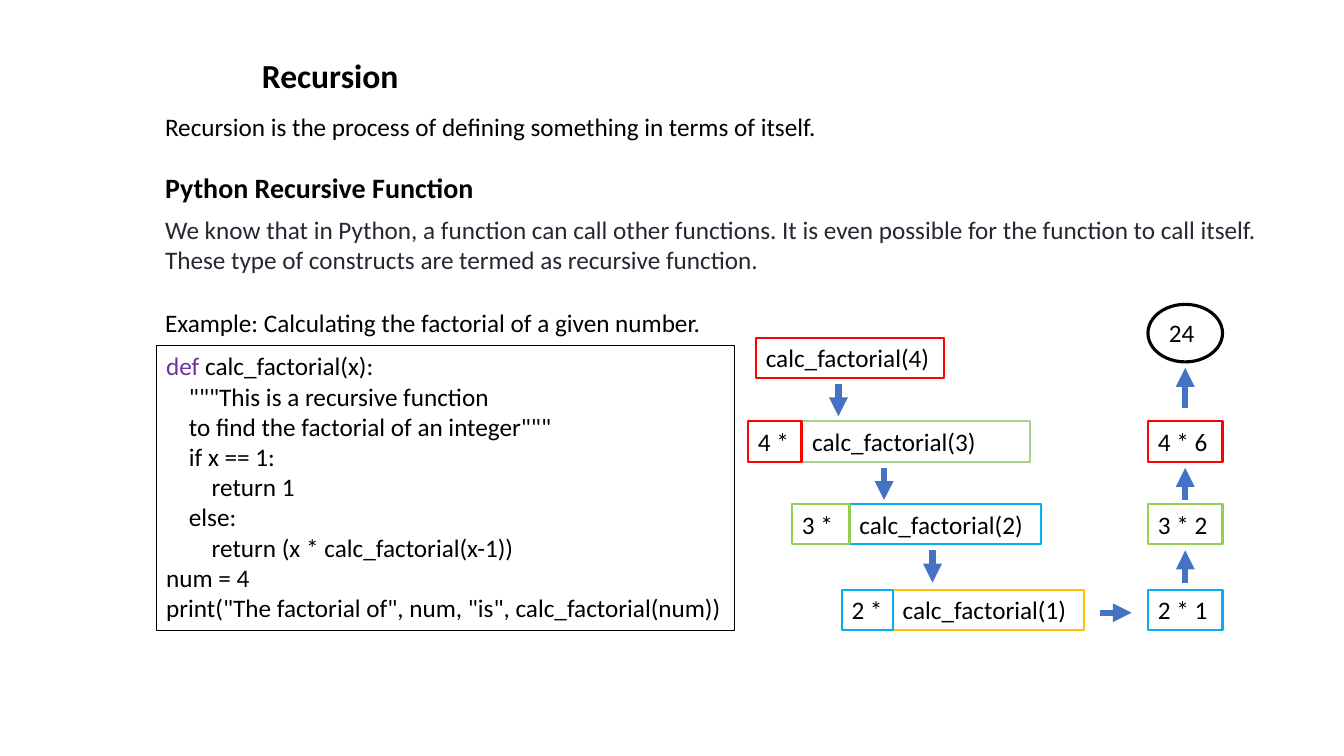
from lxml.etree import SubElement
from pptx import Presentation
from pptx.dml.color import RGBColor
from pptx.enum.shapes import MSO_CONNECTOR, MSO_SHAPE
from pptx.enum.text import MSO_ANCHOR, PP_ALIGN
from pptx.oxml.ns import qn
from pptx.util import Cm, Pt

COLORS = {
    "black": "000000", "slate": "252830", "purple": "7030A0",
    "red": "FF0000", "sage": "A9D18E", "green": "92D050",
    "sky": "00B0F0", "gold": "FFC000", "arrow": "4472C4",
}

# left, top, width, height, size, bold, color, lines
TEXTS = [
    (6.35, 1.27, 3.99, 1.27, 24, True, "black", ["Recursion"]),
    (3.91, 2.69, 17.12, 1.02, 18, False, "black",
     ["Recursion is the process of defining something in terms of itself."]),
    (3.91, 4.17, 8.36, 1.12, 20, True, "black", ["Python Recursive Function"]),
    (3.91, 5.28, 28.35, 1.8, 18, False, "slate",
     ["We know that in Python, a function can call other functions. "
      "It is even possible for the function to call itself.",
      "These type of constructs are termed as recursive function."]),
    (3.91, 7.62, 14.48, 1.02, 18, False, "black",
     ["Example: Calculating the factorial of a given number."]),
]

CODE_BOX = (3.94, 8.71, 14.58, 7.19)
CODE = [
    [("def ", "purple"), ("calc_factorial(x):", "black")],
    '    """This is a recursive function',
    '    to find the factorial of an integer"""',
    "    if x == 1:",
    "        return 1",
    "    else:",
    "        return (x * calc_factorial(x-1))",
    "num = 4",
    'print("The factorial of", num, "is", calc_factorial(num))',
]

ROW_TOPS = [8.51, 10.62, 12.7, 14.86]
BOX_HEIGHT = 1.02
# row, left, width, color, label
CALLS = [
    (0, 19.05, 4.75, "red", "calc_factorial(4)"),
    (1, 20.22, 5.74, "sage", "calc_factorial(3)"),
    (2, 21.41, 4.83, "sky", "calc_factorial(2)"),
    (3, 22.5, 4.83, "gold", "calc_factorial(1)"),
]
FACTORS = [
    (1, 18.85, 1.35, "red", "4 *"),
    (2, 19.96, 1.45, "green", "3 *"),
    (3, 21.21, 1.3, "sky", "2 *"),
]
RESULT_LEFT, RESULT_WIDTH = 28.93, 1.88
RESULTS = [
    (row, RESULT_LEFT, RESULT_WIDTH, color, label)
    for row, color, label in [(3, "sky", "2 * 1"), (2, "green", "3 * 2"), (1, "red", "4 * 6")]
]
ANSWER_TOP, ANSWER_HEIGHT, ANSWER = 7.67, 1.45, "24"

ARROW_LENGTH, ARROW_GAP = 0.81, 0.15
DOWN_ARROW_LEFTS = [21.13, 22.28, 23.5]
RETURN_ARROW = (27.71, 15.44)
ANSWER_ARROW = (10.29, 9.27)


def rgb(name):
    return RGBColor.from_string(COLORS[name])


def write(shape, lines, color="black", size=18, bold=False):
    """Fill a shape with lines, each a string or a list of (text, color) runs."""
    frame = shape.text_frame
    frame.word_wrap = True
    frame.vertical_anchor = MSO_ANCHOR.TOP
    for index, line in enumerate(lines):
        paragraph = frame.paragraphs[0] if index == 0 else frame.add_paragraph()
        paragraph.alignment = PP_ALIGN.LEFT
        runs = [(line, color)] if isinstance(line, str) else line
        for text, run_color in runs:
            run = paragraph.add_run()
            run.text = text
            run.font.name = "Calibri"
            run.font.size = Pt(size)
            run.font.bold = bold
            run.font.color.rgb = rgb(run_color)


def add_outline(slide, box, color, line_width, lines, preset=MSO_SHAPE.RECTANGLE):
    shape = slide.shapes.add_shape(preset, *map(Cm, box))
    shape.shadow.inherit = False
    shape.fill.background()
    shape.line.color.rgb = rgb(color)
    shape.line.width = Pt(line_width)
    write(shape, lines)


def add_arrow(slide, start, end):
    arrow = slide.shapes.add_connector(MSO_CONNECTOR.STRAIGHT, *map(Cm, start + end))
    arrow.line.color.rgb = rgb("arrow")
    arrow.line.width = Pt(4.5)
    SubElement(arrow.line._get_or_add_ln(), qn("a:tailEnd"), type="triangle")
    SubElement(arrow._element.spPr, qn("a:effectLst"))


def main():
    presentation = Presentation()
    presentation.slide_width, presentation.slide_height = Cm(33.87), Cm(19.05)
    slide = presentation.slides.add_slide(presentation.slide_layouts[6])

    for left, top, width, height, size, bold, color, lines in TEXTS:
        text_box = slide.shapes.add_textbox(Cm(left), Cm(top), Cm(width), Cm(height))
        write(text_box, lines, color, size, bold)
    add_outline(slide, CODE_BOX, "black", 0.75, CODE)

    for row, left, width, color, label in CALLS + FACTORS + RESULTS:
        add_outline(slide, (left, ROW_TOPS[row], width, BOX_HEIGHT), color, 1.5, [label])
    answer_box = (RESULT_LEFT, ANSWER_TOP, RESULT_WIDTH, ANSWER_HEIGHT)
    add_outline(slide, answer_box, "black", 2.25, [ANSWER], MSO_SHAPE.OVAL)

    result_center = RESULT_LEFT + RESULT_WIDTH / 2
    for row, left in enumerate(DOWN_ARROW_LEFTS):
        top = ROW_TOPS[row] + BOX_HEIGHT + ARROW_GAP
        bottom = top + ARROW_LENGTH
        add_arrow(slide, (left, top), (left, bottom))
        if row > 0:
            add_arrow(slide, (result_center, bottom), (result_center, top))
    left, top = RETURN_ARROW
    add_arrow(slide, (left, top), (left + ARROW_LENGTH, top))
    bottom, top = ANSWER_ARROW
    add_arrow(slide, (result_center, bottom), (result_center, top))

    presentation.save("out.pptx")


if __name__ == "__main__":
    main()
